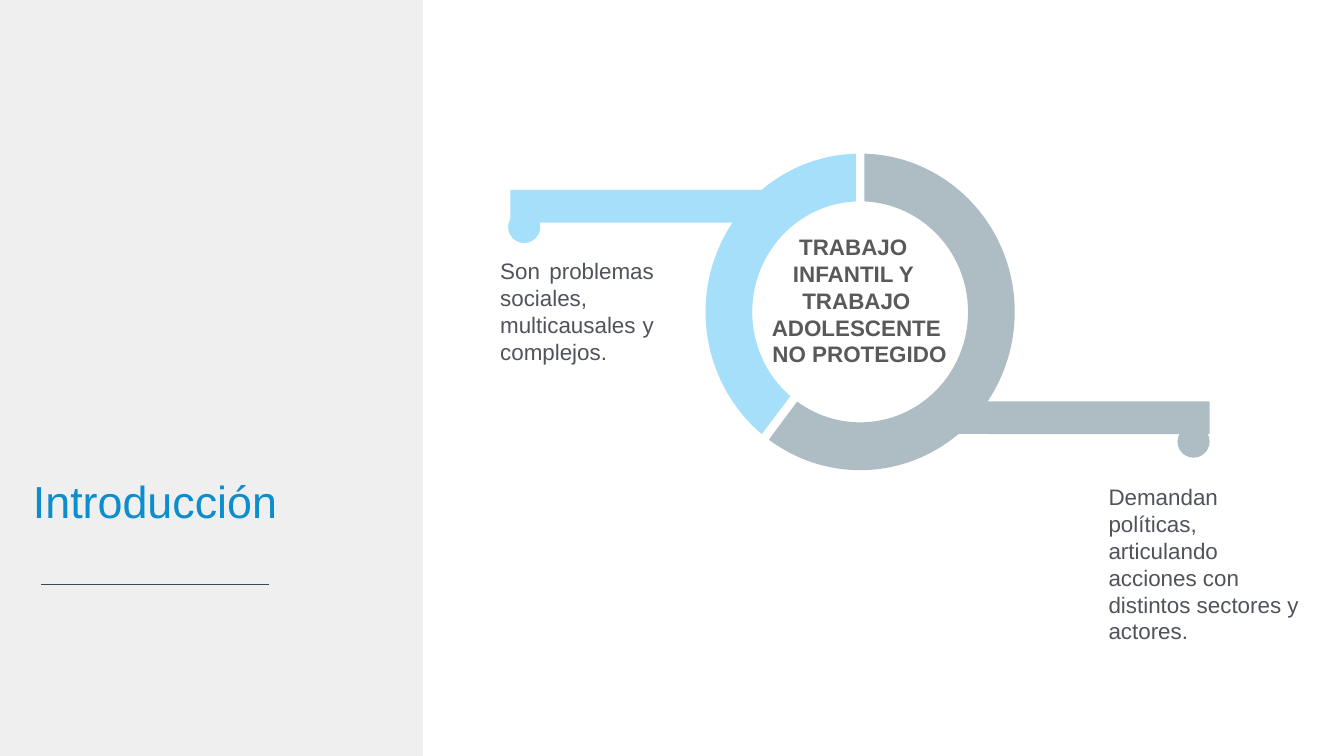
"""Build the introduction slide with a two-part ring and its callouts."""
import math

from lxml import etree
from pptx import Presentation
from pptx import util as u
from pptx.dml.color import RGBColor
from pptx.enum import shapes, text
from pptx.oxml import ns

CENTER = (460.8, 167.1)
OUTER = (82.8, 84.8)
INNER = (57.8, 59.2)
BLUE, GREY = "A6DFFA", "AEBCC4"


def color(code):
    return RGBColor.from_string(code)


def ring_point(radii, angle, pull=0):
    sine, cosine = math.sin(angle), math.cos(angle)
    return (CENTER[0] + radii[0] * (sine + pull * cosine),
            CENTER[1] - radii[1] * (cosine - pull * sine))


def arc(radii, *degrees):
    angles = [math.radians(d) for d in degrees]
    steps = [[ring_point(radii, angles[0])]]
    for start, end in zip(angles, angles[1:]):
        pull = 4 / 3 * math.tan((end - start) / 4)
        steps.append([ring_point(radii, start, pull), ring_point(radii, end, -pull),
                      ring_point(radii, end)])
    return steps


def write(para, content, size=12, fill="50535C", bold=False, align=text.PP_ALIGN.LEFT):
    para.alignment = align
    span = para.add_run()
    span.text = content
    span.font.name = "Arial"
    span.font.size = u.Pt(size)
    span.font.bold = bold
    span.font.color.rgb = color(fill)


class Canvas:
    def __init__(self, page):
        self.page = page

    def paint(self, shape, fill):
        shape.shadow.inherit = False
        shape.fill.solid()
        shape.fill.fore_color.rgb = color(fill)
        shape.line.fill.background()

    def shape(self, kind, left, top, width, height, fill):
        self.paint(self.page.shapes.add_shape(
            kind, u.Pt(left), u.Pt(top), u.Pt(width), u.Pt(height)), fill)

    def outline(self, steps, fill):
        ends = [(u.Pt(x), u.Pt(y)) for x, y in (step[-1] for step in steps)]
        builder = self.page.shapes.build_freeform(*ends[0])
        builder.add_line_segments(ends[1:], close=True)
        shape = builder.convert_to_shape()
        segments = list(shape._element.iter(ns.qn("a:lnTo")))
        for segment, step in zip(segments, steps[1:]):
            if len(step) == 3:
                curve = etree.Element(ns.qn("a:cubicBezTo"))
                for x, y in step:
                    etree.SubElement(curve, ns.qn("a:pt"), x=str(u.Pt(x) - shape.left),
                                     y=str(u.Pt(y) - shape.top))
                segment.getparent().replace(segment, curve)
        self.paint(shape, fill)

    def words(self, left, top, width, height, lines, **style):
        box = self.page.shapes.add_textbox(u.Pt(left), u.Pt(top), u.Pt(width), u.Pt(height))
        frame = box.text_frame
        frame.word_wrap = True
        frame.auto_size = text.MSO_AUTO_SIZE.SHAPE_TO_FIT_TEXT
        for index, line in enumerate(lines):
            para = frame.add_paragraph() if index else frame.paragraphs[0]
            write(para, line, **style)

    def rule(self, left, right, y, stroke, weight):
        line = self.page.shapes.add_connector(
            shapes.MSO_CONNECTOR.STRAIGHT, u.Pt(left), u.Pt(y), u.Pt(right), u.Pt(y))
        line.line.color.rgb = color(stroke)
        line.line.width = u.Pt(weight)
        etree.SubElement(line._element.spPr, ns.qn("a:effectLst"))


def main():
    deck = Presentation()
    deck.slide_width, deck.slide_height = u.Pt(720), u.Pt(405)
    canvas = Canvas(deck.slides.add_slide(deck.slide_layouts[6]))
    kinds = shapes.MSO_SHAPE

    canvas.shape(kinds.RECTANGLE, 0, 0, 226.6, 405, "EFEFEF")
    canvas.outline(arc(OUTER, -1.6, -39.6) + [[(273.4, 101.7)], [(273.4, 119.2)]]
                   + arc(OUTER, -55.7, -90, -140.5) + arc(INNER, -139.7, -90, -2.3), BLUE)
    canvas.outline([[(648, 215)]] + arc(OUTER, 124.4, 90, 1.6)
                   + arc(INNER, 2.3, 90, 180, 215.7)
                   + arc(OUTER, 216.2, 180, 140.5) + [[(648, 232.6)]], GREY)

    canvas.words(381.8, 121.3, 154, 82,
                 ["TRABAJO ", "INFANTIL Y ", "TRABAJO ADOLESCENTE", " NO PROTEGIDO"],
                 fill="595959", bold=True, align=text.PP_ALIGN.CENTER)
    canvas.words(260.9, 134.3, 96.6, 65.5,
                 ["Son problemas sociales, multicausales y complejos."],
                 align=text.PP_ALIGN.JUSTIFY)
    canvas.words(586.8, 255.3, 122.5, 94.3,
                 ["Demandan políticas, articulando acciones con distintos sectores y actores."])
    canvas.shape(kinds.OVAL, 630.8, 228, 17.2, 17.2, GREY)
    canvas.shape(kinds.OVAL, 272.2, 113, 17.2, 17.2, BLUE)
    canvas.words(10.6, 250.2, 175.7, 36, ["Introducción"], size=24, fill="0C8DCC")
    canvas.rule(144, 21.8, 313, "3A4950", 0.75)
    deck.save("out.pptx")


if __name__ == "__main__":
    main()
